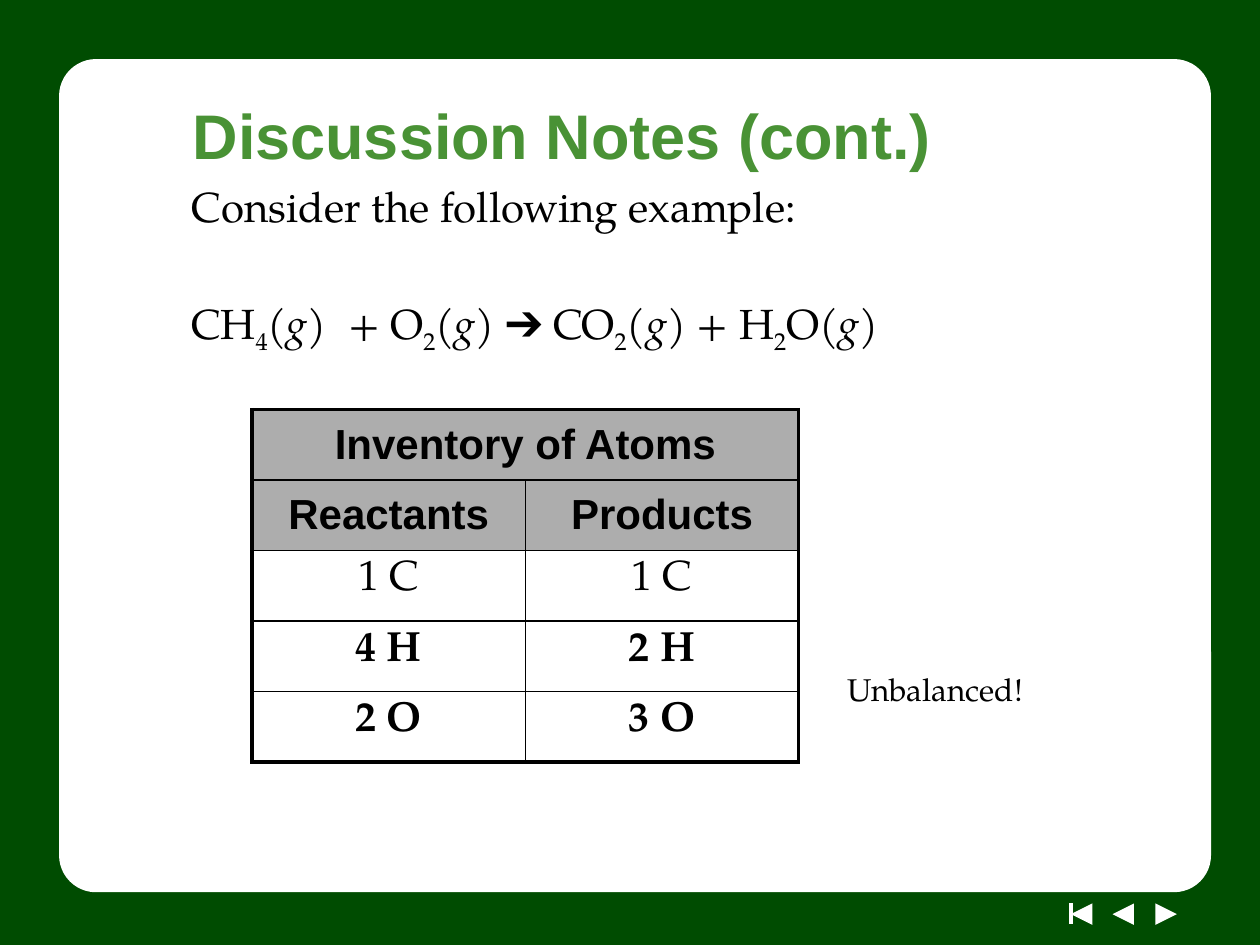
from lxml.etree import SubElement
from pptx import Presentation
from pptx.dml.color import RGBColor
from pptx.enum.shapes import MSO_CONNECTOR as Connector, MSO_SHAPE as Shape
from pptx.enum.text import MSO_ANCHOR as Anchor, PP_ALIGN as Align
from pptx.oxml.ns import qn
from pptx.util import Inches, Pt

DARK_GREEN = RGBColor(0x00, 0x4C, 0x01)
TITLE_GREEN = RGBColor(0x49, 0x92, 0x35)
GREY = RGBColor(0xAD, 0xAD, 0xAD)
WHITE = RGBColor(0xFF, 0xFF, 0xFF)
BLACK = RGBColor(0x00, 0x00, 0x00)
SANS = "Arial"
SERIF = "TeX Gyre Pagella"

deck = Presentation()
deck.slide_width, deck.slide_height = Inches(10), Inches(7.5)
page = deck.slides.add_slide(deck.slide_layouts[6])


def add_panel(kind, left, top, width, height, color):
    panel = page.shapes.add_shape(kind, Inches(left), Inches(top), Inches(width), Inches(height))
    panel.shadow.inherit = False
    panel.fill.solid()
    panel.fill.fore_color.rgb = color
    panel.line.fill.background()
    return panel


def style_text(para, name, size, color=BLACK, bold=False):
    for span in para.runs:
        span.font.name = name
        span.font.size = Pt(size)
        span.font.color.rgb = color
        span.font.bold = bold


add_panel(Shape.RECTANGLE, 0, 0, 10, 7.5, DARK_GREEN)
for left, rotation in ((9.17, 90), (8.83, 270), (8.5, 270)):
    arrow = add_panel(Shape.ISOSCELES_TRIANGLE, left, 7.17, 0.17, 0.17, WHITE)
    arrow.rotation = rotation
bar = page.shapes.add_connector(
    Connector.STRAIGHT, Inches(8.5), Inches(7.17), Inches(8.5), Inches(7.33))
bar.line.color.rgb = WHITE
bar.line.width = Pt(2)
SubElement(bar._element.spPr, qn("a:effectLst"))
card = add_panel(Shape.ROUNDED_RECTANGLE, 0.5, 0.5, 9.08, 6.55, WHITE)
card.adjustments[0] = 0.04
card.line.color.rgb = WHITE
card.line.width = Pt(4.5)

texts = (
    ("Discussion Notes (cont.)", 1.43, 0.57, 8.08, 1, SANS, 36, TITLE_GREEN, True),
    ("Consider the following example:", 1.42, 1.38, 7.83, 4.95, SERIF, 24, BLACK, False),
)
for text, left, top, width, height, name, size, color, bold in texts:
    box = page.shapes.add_textbox(Inches(left), Inches(top), Inches(width), Inches(height))
    frame = box.text_frame
    frame.word_wrap = True
    frame.text = text
    frame.vertical_anchor = Anchor.MIDDLE if bold else Anchor.TOP
    style_text(frame.paragraphs[0], name, size, color, bold)

equation = frame.add_paragraph()
equation.space_before = Pt(38.5)
for part in ("CH", "4", "(", "g", ")  + O", "2", "(", "g", ") ➔ CO", "2", "(", "g",
             ") + H", "2", "O(", "g", ")"):
    span = equation.add_run()
    span.text = part
    span.font.italic = part == "g"
    if part.isdigit():
        span.font._element.set("baseline", "-25000")
style_text(equation, SERIF, 24)

rows = (
    ("Inventory of Atoms", ""),
    ("Reactants", "Products"),
    ("1 C", "1 C"),
    ("4 H", "2 H"),
    ("2 O", "3 O"),
)
last_row = len(rows) - 1
table = page.shapes.add_table(
    len(rows), 2, Inches(2), Inches(3.25), Inches(4.33), Inches(2.81)).table
for column in table.columns:
    column.width = Inches(2.17)
table.cell(0, 0).merge(table.cell(0, 1))
for r, values in enumerate(rows):
    table.rows[r].height = Inches(0.56)
    for c, value in enumerate(values):
        cell = table.cell(r, c)
        header = r < 2
        cell.text = value
        cell.vertical_anchor = Anchor.MIDDLE
        if not header:
            cell.margin_top, cell.margin_bottom = Inches(0.02), Inches(0.1)
        para = cell.text_frame.paragraphs[0]
        para.alignment = Align.CENTER
        style_text(para, SANS if header else SERIF, 24, bold=r != 2)
        properties = cell._tc.get_or_add_tcPr()
        outer_edges = {
            "a:lnL": c == 0,
            "a:lnR": c == 1 or r == 0,
            "a:lnT": r == 0,
            "a:lnB": r == last_row,
        }
        for tag, outer in outer_edges.items():
            edge = SubElement(properties, qn(tag), w=str(Pt(2.25 if outer else 1)))
            fill = SubElement(edge, qn("a:solidFill"))
            SubElement(fill, qn("a:srgbClr"), val=str(BLACK))
        cell.fill.solid()
        cell.fill.fore_color.rgb = GREY if header else WHITE

note = page.shapes.add_textbox(Inches(6.63), Inches(5.27), Inches(1.75), Inches(0.4))
note.text_frame.word_wrap = True
note.text_frame.text = "Unbalanced!"
style_text(note.text_frame.paragraphs[0], SERIF, 18)

deck.save("out.pptx")
